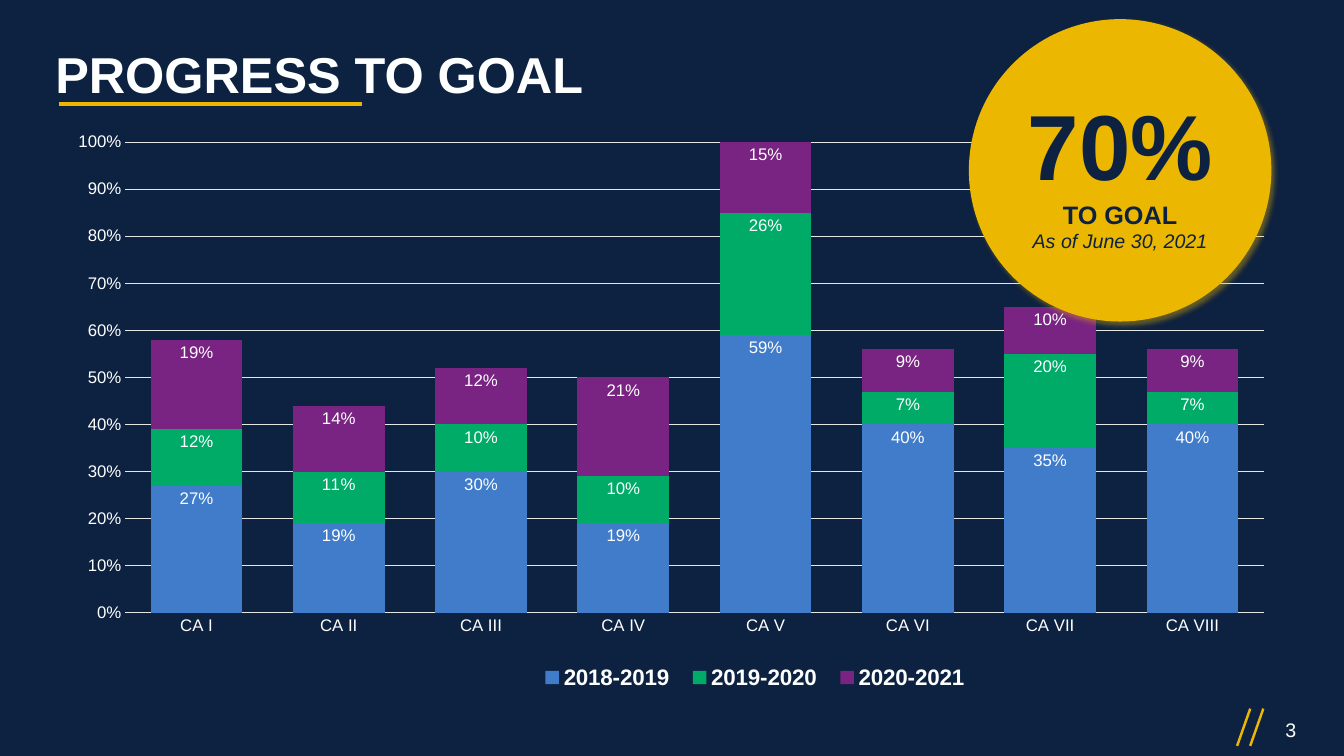
from dataclasses import dataclass

from lxml import etree
from pptx import Presentation
from pptx.chart.data import CategoryChartData
from pptx.dml.color import RGBColor
from pptx.enum.chart import XL_CHART_TYPE, XL_LABEL_POSITION, XL_LEGEND_POSITION, XL_TICK_MARK
from pptx.enum.shapes import MSO_CONNECTOR, MSO_SHAPE
from pptx.enum.text import MSO_ANCHOR, PP_ALIGN
from pptx.oxml import parse_xml
from pptx.oxml.ns import nsdecls, qn
from pptx.util import Inches, Pt

STACKED = XL_CHART_TYPE.COLUMN_STACKED
INSIDE_END = XL_LABEL_POSITION.INSIDE_END
BOTTOM = XL_LEGEND_POSITION.BOTTOM
NO_TICK = XL_TICK_MARK.NONE
STRAIGHT = MSO_CONNECTOR.STRAIGHT
RECT, OVAL = MSO_SHAPE.RECTANGLE, MSO_SHAPE.OVAL
MIDDLE, CENTER = MSO_ANCHOR.MIDDLE, PP_ALIGN.CENTER


@dataclass(frozen=True)
class Theme:
    font: str = "Arial"
    navy: str = "0D2140"
    footer: str = "0D2240"
    gold: str = "EBB700"
    white: str = "FEFFFF"
    grid: str = "E5E6E6"
    series: tuple = ("407CCA", "00AB68", "792482")
    title: int = 36
    figure: int = 66
    goal: int = 18
    small: int = 14
    legend: int = 16
    axis: int = 12


T = Theme()

REGIONS = ["CA I", "CA II", "CA III", "CA IV", "CA V", "CA VI", "CA VII", "CA VIII"]
PROGRESS = {
    "2018-2019": (0.27, 0.19, 0.30, 0.19, 0.59, 0.40, 0.35, 0.40),
    "2019-2020": (0.12, 0.11, 0.10, 0.10, 0.26, 0.07, 0.20, 0.07),
    "2020-2021": (0.19, 0.14, 0.12, 0.21, 0.15, 0.09, 0.10, 0.09),
}


def rgb(value):
    return RGBColor.from_string(value)


def set_fill(fill, color):
    fill.solid()
    fill.fore_color.rgb = rgb(color)


def set_font(font, size, color, bold=False, italic=False):
    font.name, font.size, font.bold, font.italic = T.font, Pt(size), bold, italic
    font.color.rgb = rgb(color)


def add_text(s, x, y, w, h, text, size, bold=False):
    tf = s.shapes.add_textbox(Inches(x), Inches(y), Inches(w), Inches(h)).text_frame
    tf.word_wrap = True
    tf.vertical_anchor = MIDDLE
    p = tf.paragraphs[0]
    p.text = text
    set_font(p.font, size, T.white, bold)
    return p


def add_shape(s, kind, x, y, w, h, color):
    shape = s.shapes.add_shape(kind, Inches(x), Inches(y), Inches(w), Inches(h))
    shape.shadow.inherit = False
    set_fill(shape.fill, color)
    shape.line.fill.background()
    return shape


def add_line(s, x1, y1, x2, y2, width):
    line = s.shapes.add_connector(STRAIGHT, Inches(x1), Inches(y1), Inches(x2), Inches(y2))
    line.line.color.rgb = rgb(T.gold)
    line.line.width = Pt(width)
    etree.SubElement(line._element.spPr, qn("a:effectLst"))


def set_layout(parent, x, y, w, h, inner=False):
    """Place a plot area or legend by fractions of the chart's size."""
    for old in parent.findall(qn("c:layout")):
        parent.remove(old)
    target = '<c:layoutTarget val="inner"/>' if inner else ""
    layout = parse_xml(
        f'<c:layout {nsdecls("c")}><c:manualLayout>{target}'
        '<c:xMode val="edge"/><c:yMode val="edge"/>'
        f'<c:x val="{x}"/><c:y val="{y}"/><c:w val="{w}"/><c:h val="{h}"/>'
        '</c:manualLayout></c:layout>')
    parent.insert(0 if inner else 1, layout)


def add_footer(s, x, y, w, h, number):
    band = add_shape(s, RECT, x, y, w, h, T.footer)
    color = band._element.spPr.find(qn("a:solidFill"))[0]
    etree.SubElement(color, qn("a:alpha"), val="69000")
    right = x + w
    for offset in (0.8, 0.93):
        add_line(s, right - offset, y + 0.1, right - offset - 0.13, y + 0.47, 1.75)
    add_text(s, right - 0.68, y + 0.11, 0.62, 0.4, number, T.small)


def add_title(s, x, y, w, h, text):
    p = add_text(s, x, y, w, h, text, T.title, bold=True)
    p.line_spacing = 0.9
    add_line(s, x + 0.14, y + 0.63, x + 3.14, y + 0.63, 3)


def add_progress_chart(s, x, y, w, h):
    data = CategoryChartData(number_format="0%")
    data.categories = REGIONS
    for name, values in PROGRESS.items():
        data.add_series(name, values)
    chart = s.shapes.add_chart(STACKED, Inches(x), Inches(y), Inches(w), Inches(h), data).chart
    set_font(chart.font, T.axis, T.white)
    chart.has_title = False

    chart.has_legend = True
    legend = chart.legend
    legend.position = BOTTOM
    legend.include_in_layout = False
    set_font(legend.font, T.legend, T.white, bold=True)
    set_layout(legend._element, 0.385, 0.92, 0.37, 0.07)

    cat, val = chart.category_axis, chart.value_axis
    for axis in (cat, val):
        axis.major_tick_mark = axis.minor_tick_mark = NO_TICK
        set_font(axis.tick_labels.font, T.axis, T.white)
    val.minimum_scale, val.maximum_scale, val.major_unit = 0, 1, 0.1
    val.tick_labels.number_format = "0%"
    val.tick_labels.number_format_is_linked = False
    val.format.line.fill.background()
    for line in (cat.format.line, val.major_gridlines.format.line):
        line.color.rgb = rgb(T.grid)
        line.width = Pt(0.75)

    plot = chart.plots[0]
    plot.gap_width, plot.overlap, plot.vary_by_categories = 55, 100, False
    for series, color in zip(plot.series, T.series):
        set_fill(series.format.fill, color)
        labels = series.data_labels
        labels.show_value = True
        labels.position = INSIDE_END
        labels.number_format = "0%"
        labels.number_format_is_linked = False
        set_font(labels.font, T.axis, T.white)
    set_layout(chart._chartSpace.chart.plotArea, 0.054, 0.028, 0.933, 0.815, inner=True)


def add_goal_badge(s, x, y, size):
    badge = add_shape(s, OVAL, x, y, size, size, T.gold)
    effects = badge._element.spPr.find(qn("a:effectLst"))
    effects.append(parse_xml(
        f'<a:outerShdw {nsdecls("a")} blurRad="{Pt(4)}" dist="{Pt(3)}" dir="2700000" '
        f'algn="tl" rotWithShape="0"><a:srgbClr val="{T.gold}"><a:alpha val="40000"/>'
        '</a:srgbClr></a:outerShdw>'))
    tf = badge.text_frame
    tf.word_wrap = True
    tf.vertical_anchor = MIDDLE
    lines = (("70%", T.figure, True, False),
             ("TO GOAL", T.goal, True, False),
             ("As of June 30, 2021", T.small, False, True))
    for i, (text, *style) in enumerate(lines):
        p = tf.add_paragraph() if i else tf.paragraphs[0]
        p.text = text
        p.alignment = CENTER
        font_size, bold, italic = style
        set_font(p.font, font_size, T.navy, bold, italic)


def main():
    prs = Presentation()
    prs.slide_width, prs.slide_height = Inches(13.33), Inches(7.5)
    s = prs.slides.add_slide(prs.slide_layouts[6])
    set_fill(s.background.fill, T.navy)
    add_footer(s, 0, 6.93, 13.33, 0.57, "3")
    add_title(s, 0.45, 0.4, 9.46, 0.73, "PROGRESS TO GOAL")
    add_progress_chart(s, 0.59, 1.25, 12.1, 5.73)
    add_goal_badge(s, 9.61, 0.19, 3)
    prs.save("out.pptx")


if __name__ == "__main__":
    main()
